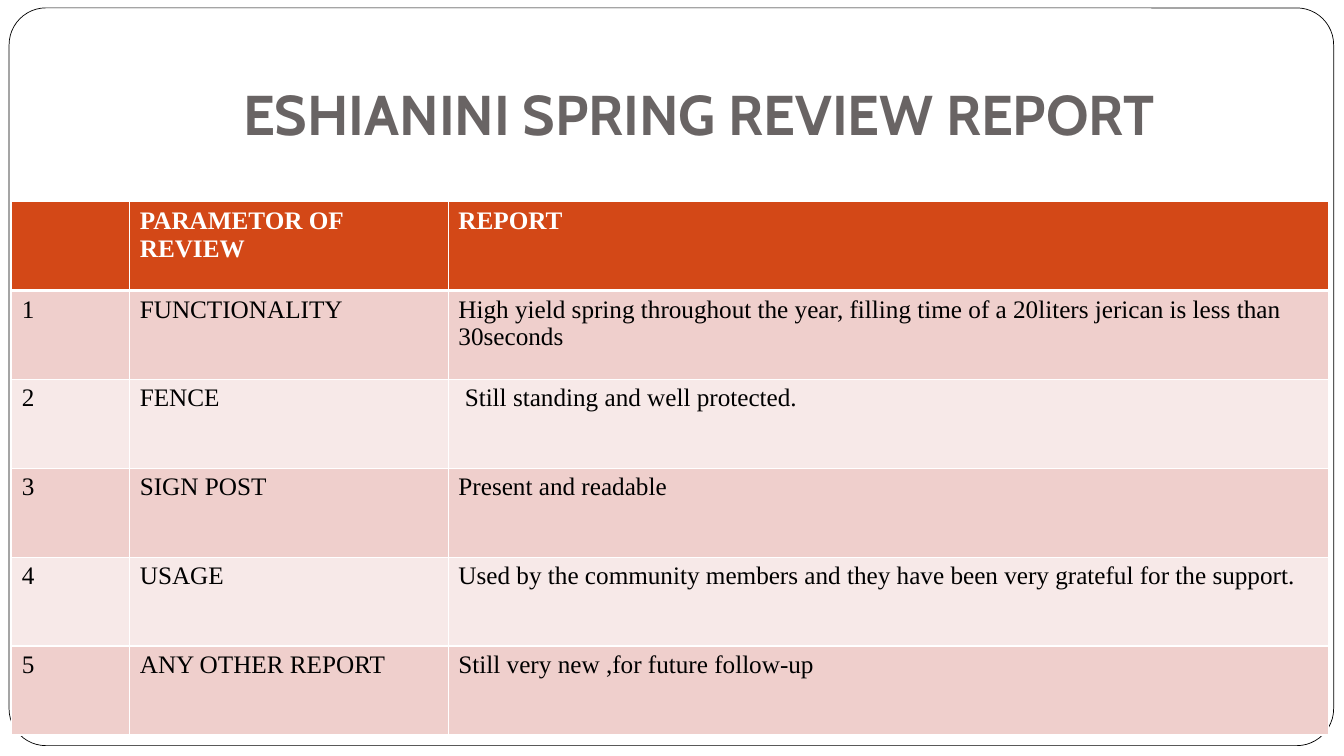
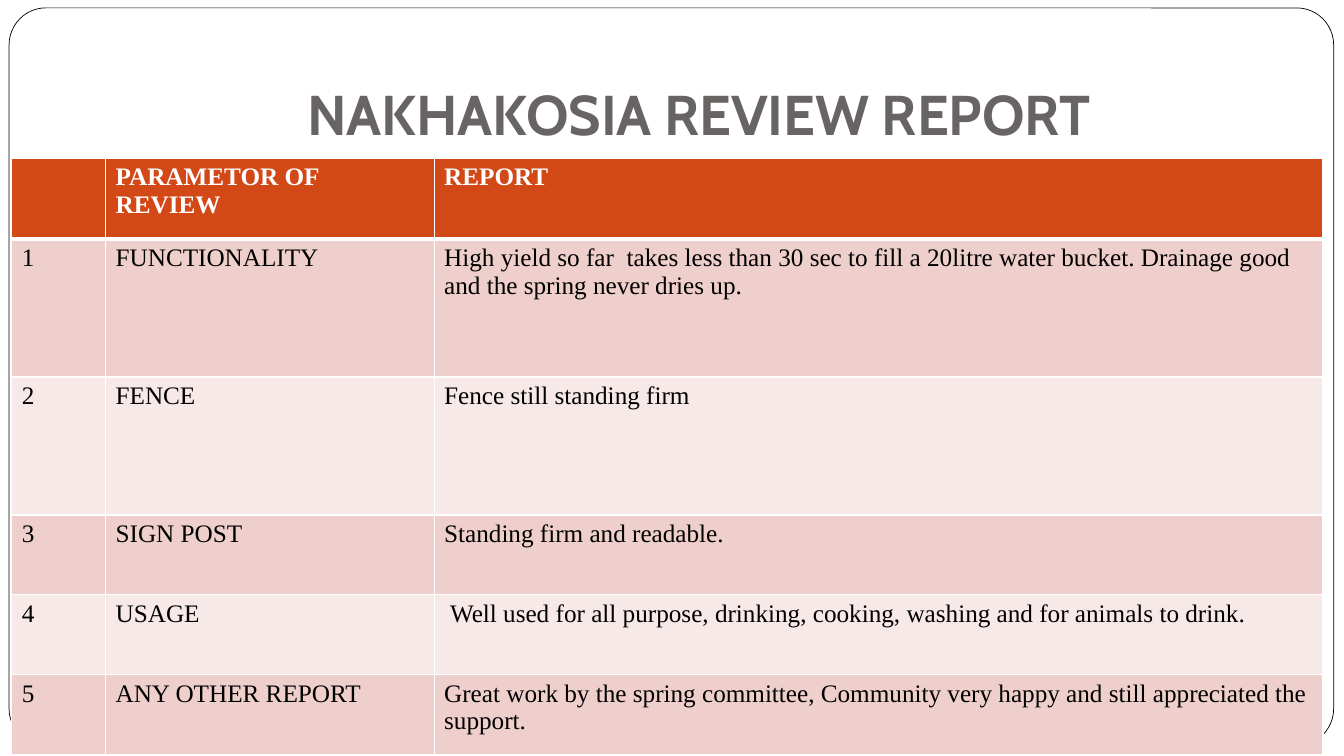
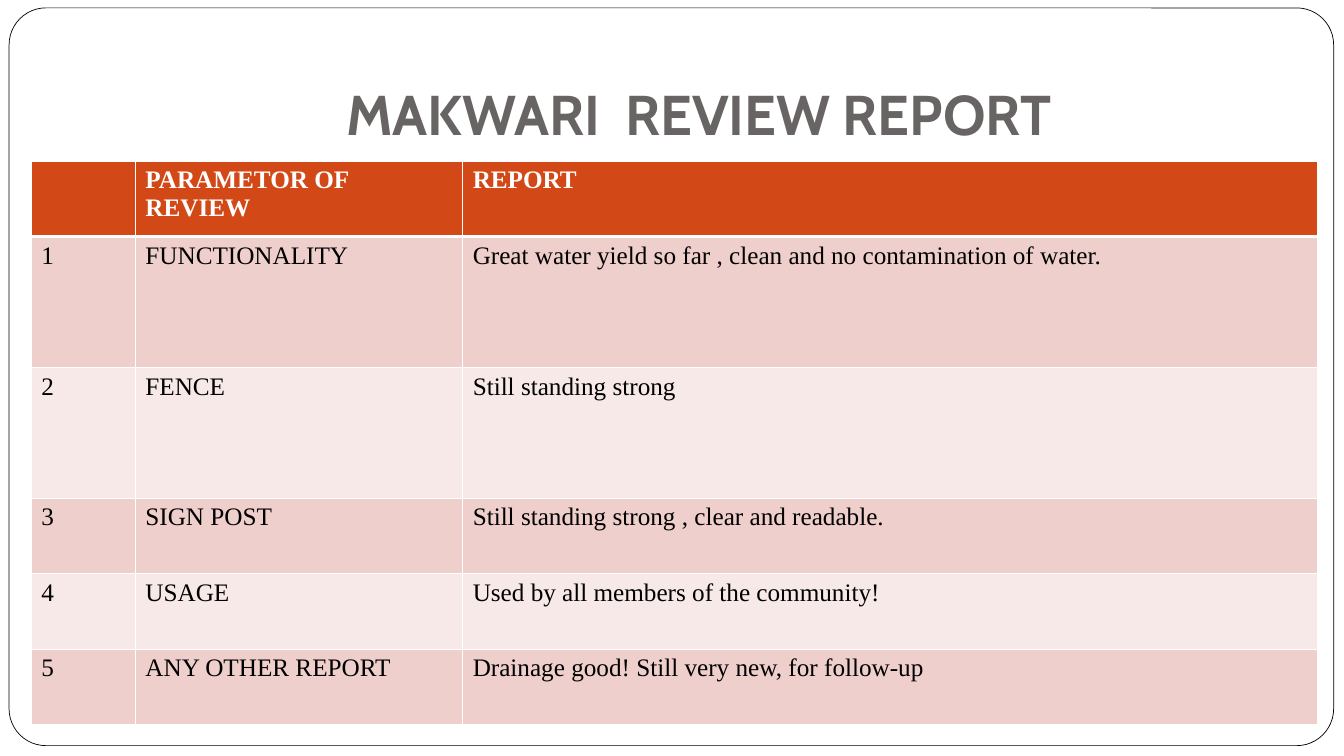
from lxml import etree
from pptx import Presentation
from pptx.dml.color import RGBColor
from pptx.enum.shapes import MSO_SHAPE
from pptx.enum.text import MSO_ANCHOR, MSO_AUTO_SIZE, PP_ALIGN
from pptx.oxml.ns import qn
from pptx.util import Cm, Pt

ROUND = MSO_SHAPE.ROUNDED_RECTANGLE
BOTTOM = MSO_ANCHOR.BOTTOM
CENTER = PP_ALIGN.CENTER
FIXED = MSO_AUTO_SIZE.NONE

WHITE = RGBColor(0xFF, 0xFF, 0xFF)
BLACK = RGBColor(0, 0, 0)
GRAY = RGBColor(0x69, 0x64, 0x64)
ORANGE = RGBColor(0xD3, 0x48, 0x17)
BANDS = RGBColor(0xF7, 0xE9, 0xE8), RGBColor(0xEF, 0xCF, 0xCC)

HEAD = ["", "PARAMETOR OF REVIEW", "REPORT"]
TOPICS = ["FUNCTIONALITY", "FENCE", "SIGN POST", "USAGE", "ANY OTHER REPORT"]

SLIDES = [
    {
        "title": "ESHIANINI SPRING REVIEW REPORT ",
        "left": 0.3, "top": 5.08,
        "cols": [2.97, 8.03, 22.17],
        "rows": [2.24] * 6,
        "notes": [
            "High yield spring throughout the year, filling time of a 20liters jerican is less than 30seconds",
            " Still standing and well protected.",
            "Present and readable",
            "Used by the community members and they have been very grateful for the support.",
            "Still very new ,for future follow-up",
        ],
    },
    {
        "title": "NAKHAKOSIA REVIEW REPORT ",
        "left": 0.3, "top": 3.99,
        "cols": [2.36, 8.28, 22.4],
        "rows": [2.03] + [3.48] * 2 + [2.01] * 3,
        "notes": [
            "High yield so far  takes less than 30 sec to fill a 20litre water bucket. Drainage good and the spring never dries up.",
            "Fence still standing firm",
            "Standing firm and readable.",
            " Well used for all purpose, drinking, cooking, washing and for animals to drink.",
            "Great work by the spring committee, Community very happy and still appreciated the support.",
        ],
    },
    {
        "title": "MAKWARI  REVIEW REPORT ",
        "left": 0.79, "top": 4.06,
        "cols": [2.62, 8.25, 21.54],
        "rows": [1.9] + [3.3] * 2 + [1.9] * 3,
        "notes": [
            "Great water yield so far , clean and no contamination of water.",
            "Still standing strong",
            "Still standing strong , clear and readable.",
            "Used by all members of the community!",
            "Drainage good! Still very new, for follow-up",
        ],
    },
]


def style(font, name, size, color, bold):
    font.name = name
    font.size = Pt(size)
    font.color.rgb = color
    font.bold = bold


def set_layout(layout):
    title = layout.placeholders[0]
    title.left, title.top = Cm(3.38), Cm(0.76)
    title.width, title.height = Cm(28.78), Cm(3.18)
    text = title.text_frame
    text.vertical_anchor = BOTTOM
    text.auto_size = FIXED
    text.margin_left = text.margin_right = text.margin_bottom = Cm(0.25)
    text.margin_top = Cm(0.13)


def add_frame(slide, layout):
    frame = slide.shapes.add_shape(ROUND, Cm(0.23), Cm(0.2), Cm(33.38), Cm(18.59))
    frame.adjustments[0] = 0.05
    frame.shadow.inherit = False
    frame.fill.solid()
    frame.fill.fore_color.rgb = WHITE
    frame.line.color.rgb = BLACK
    frame.line.width = Pt(0.5)
    layout.shapes.element.insert(2, frame.element)


def add_border(cell, side, width):
    props = cell._tc.get_or_add_tcPr()
    line = etree.SubElement(props, qn("a:ln" + side), w=str(Pt(width)))
    fill = etree.SubElement(line, qn("a:solidFill"))
    etree.SubElement(fill, qn("a:srgbClr"), val=str(WHITE))


def fill_cell(cell, text, row):
    for side in "LRTB":
        thick = (row, side) in ((0, "B"), (1, "T"))
        add_border(cell, side, 3 if thick else 1)
    cell.fill.solid()
    cell.fill.fore_color.rgb = BANDS[row % 2] if row else ORANGE
    cell.text_frame.text = text
    for run in cell.text_frame.paragraphs[0].runs:
        style(run.font, "Times New Roman", 18, BLACK if row else WHITE, row == 0)


def add_review(slide, spec):
    cols, rows = spec["cols"], spec["rows"]
    table = slide.shapes.add_table(
        len(rows), len(cols), Cm(spec["left"]), Cm(spec["top"]),
        Cm(sum(cols)), Cm(sum(rows))).table
    for col, width in zip(table.columns, cols):
        col.width = Cm(width)
    for row, height in zip(table.rows, rows):
        row.height = Cm(height)
    pairs = zip(TOPICS, spec["notes"])
    lines = [HEAD] + [[str(n), *pair] for n, pair in enumerate(pairs, 1)]
    for r, line in enumerate(lines):
        for c, text in enumerate(line):
            fill_cell(table.cell(r, c), text, r)


def main():
    deck = Presentation()
    deck.slide_width, deck.slide_height = Cm(33.87), Cm(19.05)
    layout = deck.slide_layouts[5]
    set_layout(layout)
    for n, spec in enumerate(SLIDES):
        slide = deck.slides.add_slide(layout)
        if n == 0:
            add_frame(slide, layout)
        title = slide.shapes.title.text_frame
        title.text = spec["title"]
        title.paragraphs[0].alignment = CENTER
        style(title.paragraphs[0].runs[0].font, "Cabin", 40, GRAY, True)
        add_review(slide, spec)
    deck.save("out.pptx")


if __name__ == "__main__":
    main()
